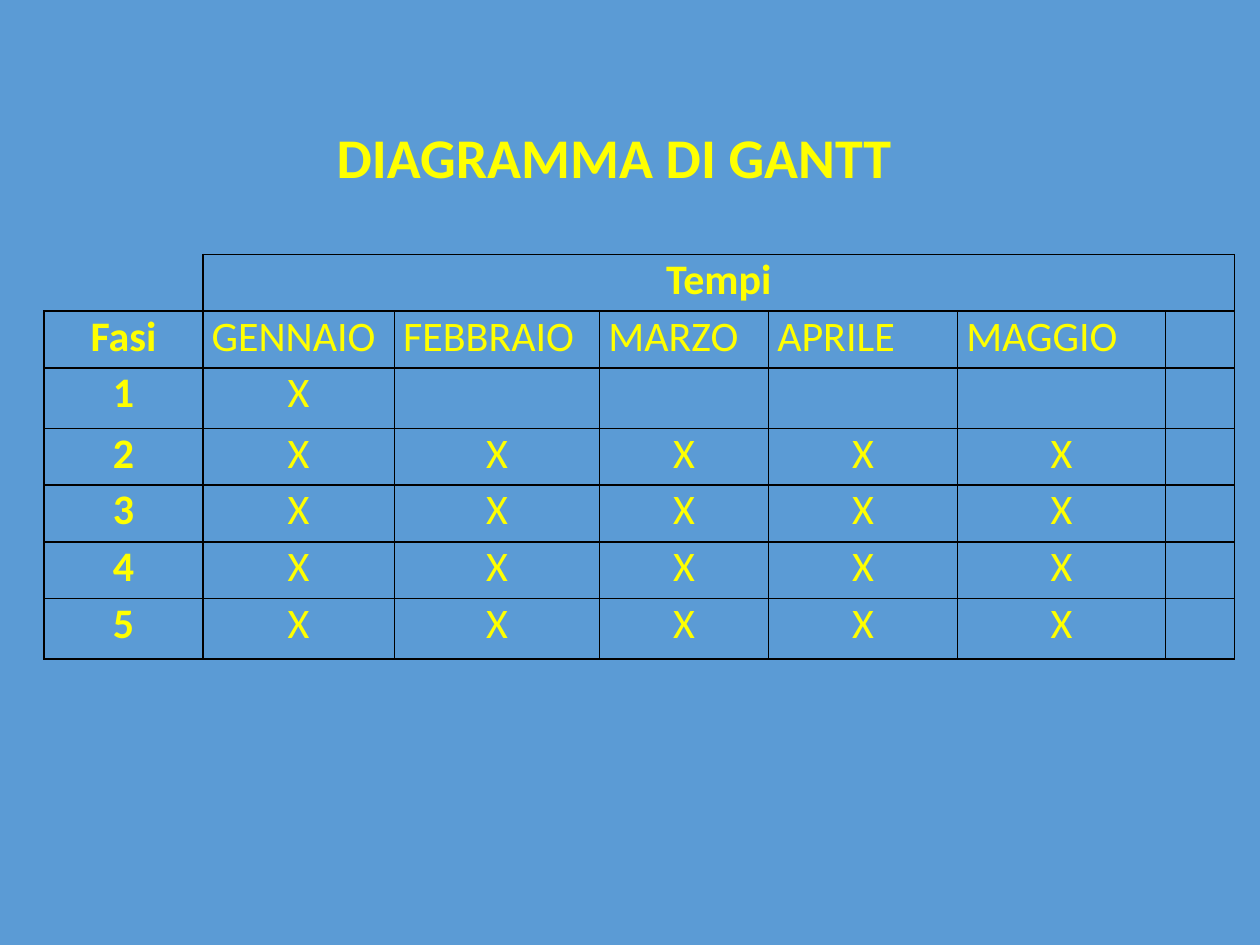
from dataclasses import dataclass

import pptx
import pptx.dml.color
import pptx.enum.text
import pptx.oxml.ns
import pptx.util
from lxml import etree

Inches = pptx.util.Inches
Pt = pptx.util.Pt
Align = pptx.enum.text.PP_ALIGN

COLORS = {"background": "5B9BD5", "text": "FFFF00", "border": "000000"}
FONT = "Calibri"
MONTHS = ["GENNAIO", "FEBBRAIO", "MARZO", "APRILE", "MAGGIO"]
ACTIVE_MONTHS = {"1": 1, "2": 5, "3": 5, "4": 5, "5": 5}
COL_WIDTHS = [1.26, 1.52, 1.63, 1.34, 1.5, 1.65, 0.55]
ROW_HEIGHTS = [0.45, 0.45, 0.48, 0.45, 0.45, 0.45, 0.48]


@dataclass
class Entry:
    text: str = ""
    bold: bool = False
    align: Align = Align.CENTER


def rgb(name: str) -> pptx.dml.color.RGBColor:
    return pptx.dml.color.RGBColor.from_string(COLORS[name])


def write_text(tf, entry: Entry, size: int) -> None:
    tf.text = entry.text
    p = tf.paragraphs[0]
    p.alignment = entry.align
    for r in p.runs:
        r.font.name = FONT
        r.font.size = Pt(size)
        r.font.bold = entry.bold
        r.font.color.rgb = rgb("text")


def set_borders(cell, visible: str) -> None:
    qn = pptx.oxml.ns.qn
    tc_pr = cell._tc.get_or_add_tcPr()
    for side in "LRTB":
        ln = etree.SubElement(tc_pr, qn(f"a:ln{side}"), w=str(Pt(1)))
        if side in visible:
            fill = etree.SubElement(ln, qn("a:solidFill"))
            etree.SubElement(fill, qn("a:srgbClr"), val=COLORS["border"])
        else:
            etree.SubElement(ln, qn("a:noFill"))


def draw_cell(cell, entry: Entry) -> None:
    set_borders(cell, "LRTB")
    cell.fill.solid()
    cell.fill.fore_color.rgb = rgb("background")
    if entry.text:
        cell.margin_left = cell.margin_right = Inches(0.07)
        cell.margin_top = cell.margin_bottom = 0
        write_text(cell.text_frame, entry, 24)


def gantt_rows() -> list[list[Entry]]:
    months = [Entry(month, align=Align.JUSTIFY) for month in MONTHS]
    rows = [
        [Entry(), Entry("Tempi", bold=True)] + [Entry()] * len(MONTHS),
        [Entry("Fasi", bold=True), *months, Entry()],
    ]
    for phase, count in ACTIVE_MONTHS.items():
        marks = [Entry("X" if i < count else "") for i in range(len(MONTHS))]
        rows.append([Entry(phase, bold=True), *marks, Entry()])
    return rows


def draw_title(s) -> None:
    sp = s.shapes.add_textbox(Inches(2.55), Inches(0.92), Inches(4.65), Inches(0.64))
    tf = sp.text_frame
    tf.word_wrap = False
    tf.auto_size = pptx.enum.text.MSO_AUTO_SIZE.SHAPE_TO_FIT_TEXT
    write_text(tf, Entry("DIAGRAMMA DI GANTT", bold=True), 32)


def draw_gantt(s) -> None:
    table = s.shapes.add_table(
        len(ROW_HEIGHTS), len(COL_WIDTHS), Inches(0.35), Inches(2.02),
        Inches(sum(COL_WIDTHS)), Inches(sum(ROW_HEIGHTS)),
    ).table
    table.first_row = table.horz_banding = False
    for column, width in zip(table.columns, COL_WIDTHS):
        column.width = Inches(width)
    for row, height in zip(table.rows, ROW_HEIGHTS):
        row.height = Inches(height)
    table.cell(0, 1).merge(table.cell(0, len(COL_WIDTHS) - 1))
    for i, entries in enumerate(gantt_rows()):
        for j, entry in enumerate(entries):
            cell = table.cell(i, j)
            if i == j == 0:
                set_borders(cell, "RB")
                cell.fill.background()
            else:
                draw_cell(cell, entry)


def main() -> None:
    prs = pptx.Presentation()
    prs.slide_width, prs.slide_height = Inches(10), Inches(7.5)
    s = prs.slides.add_slide(prs.slide_layouts[6])
    s.background.fill.solid()
    s.background.fill.fore_color.rgb = rgb("background")
    draw_title(s)
    draw_gantt(s)
    prs.save("out.pptx")


if __name__ == "__main__":
    main()
